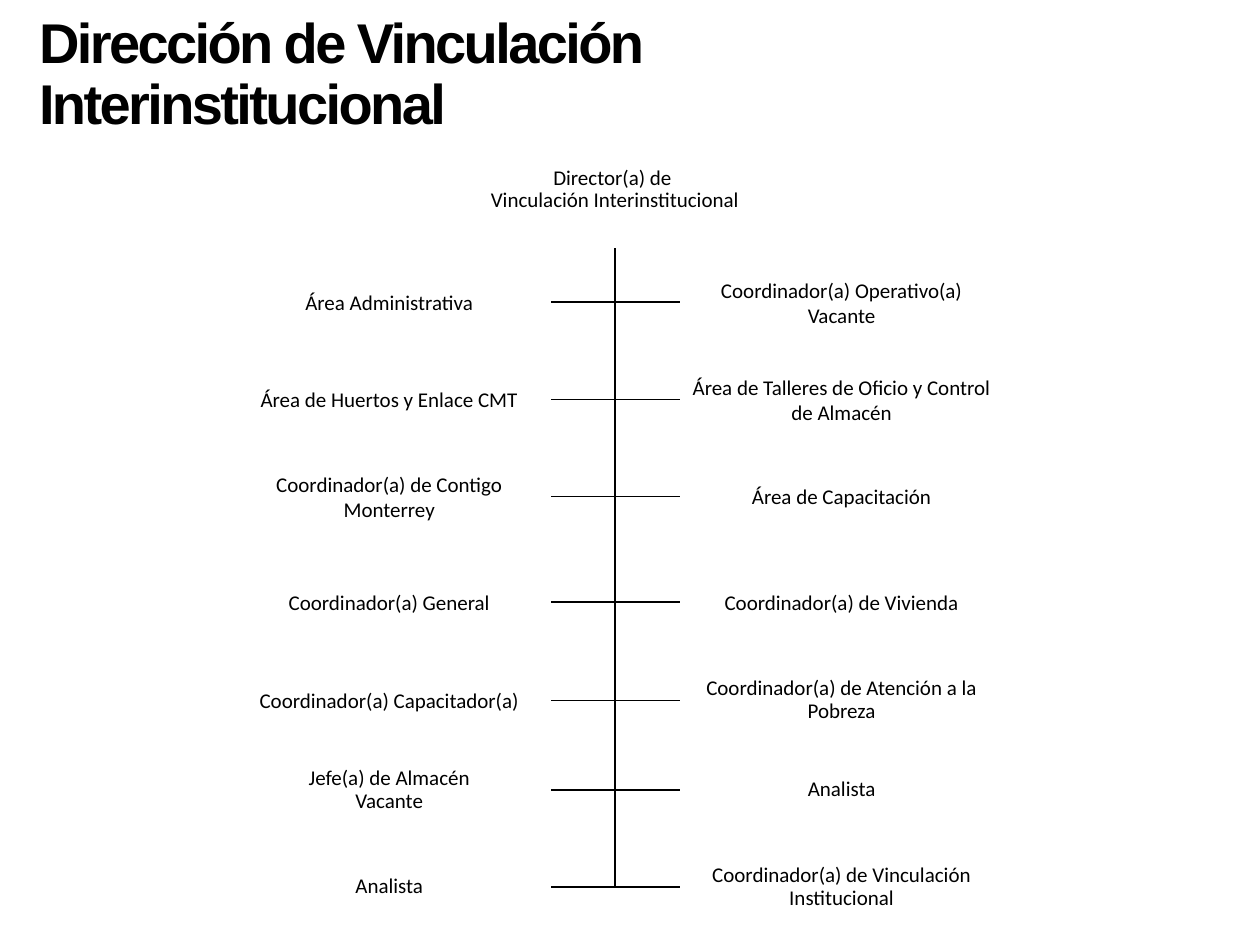
from pptx import Presentation
from pptx import util as u
from pptx.dml.color import RGBColor
from pptx.enum import shapes, text

BLACK, WHITE = "000000", "FFFFFF"
SPINE_X, SPINE_TOP = 4.88, 1.97
LEFT_X, RIGHT_X = 1.81, 5.4
BOX_W, BOX_H = 2.56, 0.6

# Top, left text, left line spacing, right text, right line spacing
# ("\n" starts a paragraph, "\v" breaks a line)
ROWS = [
    (2.1, "Área Administrativa", 1.0,
     "Coordinador(a) Operativo(a)\nVacante", 1.0),
    (2.87, "Área de Huertos y Enlace CMT", 1.0,
     "Área de Talleres de Oficio y Control de Almacén", 1.0),
    (3.64, "Coordinador(a) de Contigo Monterrey", 1.0,
     "Área de Capacitación", 1.0),
    (4.48, "Coordinador(a) General", 1.0, "Coordinador(a) de Vivienda", 1.0),
    (5.26, "Coordinador(a) Capacitador(a)", 1.0,
     "Coordinador(a) de Atención a la Pobreza", 0.9),
    (5.97, "Jefe(a) de Almacén\vVacante", 0.9, "Analista", 0.9),
    (6.74, "Analista", 0.9, "Coordinador(a) de Vinculación Institucional", 0.9),
]


def color(value):
    return RGBColor.from_string(value)


def format_text(tf, words, align, spacing, margin, **font):
    """Fill a text frame and give every run the same font."""
    tf.text = words
    frame = dict(word_wrap=True, auto_size=text.MSO_AUTO_SIZE.NONE,
                 vertical_anchor=text.MSO_ANCHOR.MIDDLE)
    for side in ("left", "top", "right", "bottom"):
        frame["margin_" + side] = u.Inches(margin[side in ("top", "bottom")])
    for name, value in frame.items():
        setattr(tf, name, value)
    for p in tf.paragraphs:
        p.alignment = align
        p.line_spacing = spacing
        for r in p.runs:
            r.font.color.rgb = color(BLACK)
            for name, value in font.items():
                setattr(r.font, name, value)


def add_title(s, words):
    sp = s.shapes.title
    sp.left, sp.top, sp.width, sp.height = map(u.Inches, (0.21, 0.13, 7.59, 0.94))
    format_text(sp.text_frame, words, text.PP_ALIGN.LEFT, 0.9, (0.1, 0.05),
                name="Arial", size=u.Pt(32), bold=True)
    for r in sp.text_frame.paragraphs[0].runs:
        r._r.get_or_add_rPr().set("spc", "-150")  # tight letter spacing


def add_branch(s, x, y):
    """Elbow line from the director down the spine and out to a post."""
    points = [(u.Inches(px), u.Inches(py)) for px, py in
              ((SPINE_X, SPINE_TOP), (SPINE_X, y), (x, y))]
    fb = s.shapes.build_freeform(*points[0])
    fb.add_line_segments(points[1:], close=False)
    sp = fb.convert_to_shape()
    sp.shadow.inherit = False
    sp.fill.background()
    sp.line.color.rgb = color(BLACK)
    sp.line.width = u.Pt(1)


def add_post(s, x, y, w, h, words, spacing, fill=None):
    sp = s.shapes.add_shape(shapes.MSO_SHAPE.RECTANGLE,
                            *map(u.Inches, (x, y, w, h)))
    sp.shadow.inherit = False
    sp.line.fill.background()
    if fill:
        sp.fill.solid()
        sp.fill.fore_color.rgb = color(fill)
    else:
        sp.fill.background()
    format_text(sp.text_frame, words, text.PP_ALIGN.CENTER, spacing,
                (0.01, 0.01), name="Calibri", size=u.Pt(12))


def main():
    prs = Presentation()
    prs.slide_width, prs.slide_height = u.Inches(10), u.Inches(7.5)
    s = prs.slides.add_slide(prs.slide_layouts[5])
    add_title(s, "Dirección de Vinculación Interinstitucional")

    # Branches lie behind the posts, lowest first
    for top, *_ in reversed(ROWS):
        for x in (RIGHT_X, LEFT_X + BOX_W):
            add_branch(s, x, top + BOX_H / 2)

    # Director, then the pairs of posts
    add_post(s, 3.78, 1.04, 2.2, 0.93,
             "Director(a) de \vVinculación Interinstitucional", 0.9)
    for top, left, left_spacing, right, right_spacing in ROWS:
        add_post(s, LEFT_X, top, BOX_W, BOX_H, left, left_spacing, WHITE)
        add_post(s, RIGHT_X, top, BOX_W, BOX_H, right, right_spacing, WHITE)

    prs.save("out.pptx")


if __name__ == "__main__":
    main()
